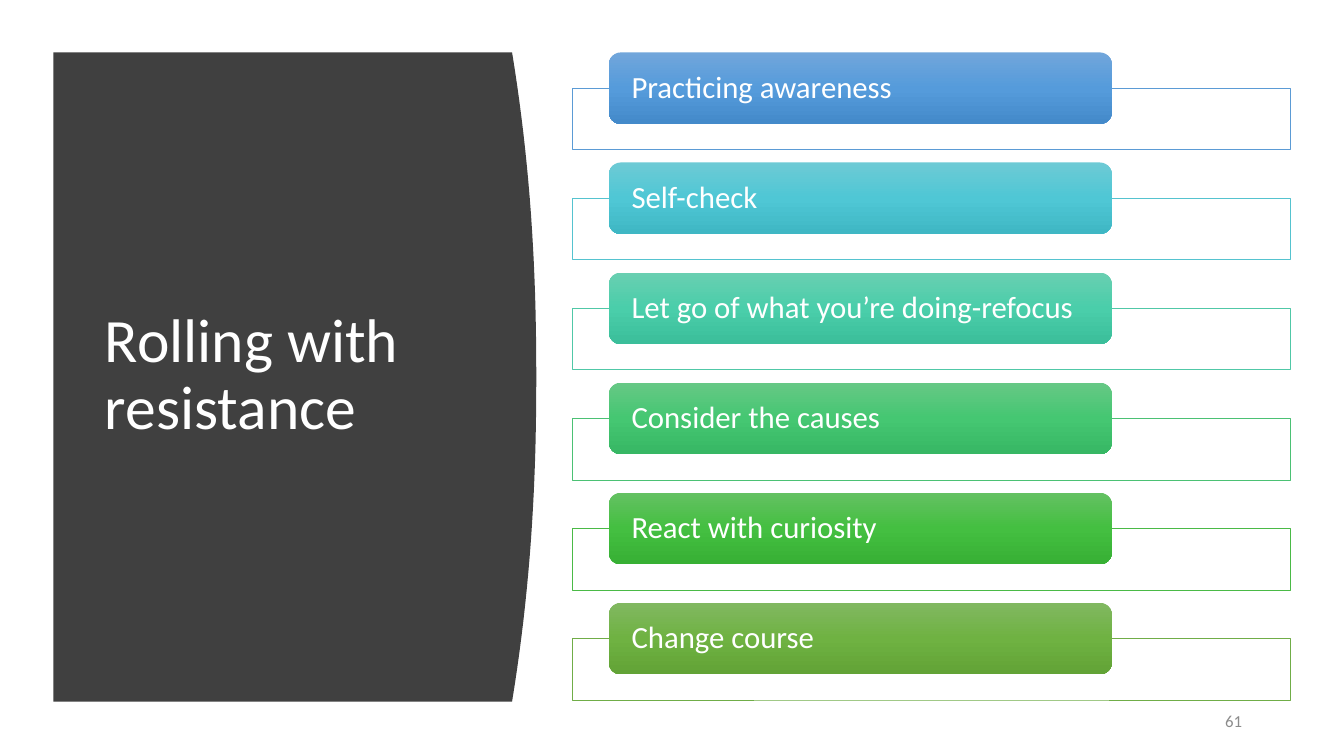
from copy import deepcopy

from pptx import Presentation
from pptx.dml.color import RGBColor
from pptx.enum.shapes import MSO_SHAPE
from pptx.enum.text import MSO_ANCHOR, PP_ALIGN
from pptx.oxml.ns import qn
from pptx.util import Inches, Pt

COLORS = {"panel": "404040", "white": "FFFFFF", "number": "8C8C8C"}
FONT = "Calibri"
# Label, outline of the frame, gradient of the bar from top to bottom
STEPS = [
    ("Practicing awareness", "5B9BD5", ("71A6DB", "559BDB", "448ACA")),
    ("Self-check", "55C3CF", ("6DCAD5", "4FC7D5", "3FB7C4")),
    ("Let go of what you’re doing-refocus", "50C8A7", ("69CFB1", "4ACEAA", "3BBE9A")),
    ("Consider the causes", "4BC174", ("66C885", "45C772", "37B764")),
    ("React with curiosity", "4ABA46", ("64C162", "44BF41", "37B034")),
    ("Change course", "70AD47", ("81B861", "6FB242", "62A336")),
]
STEP_PITCH = 1.092


def write_text(shape, text, size, color, alignment=PP_ALIGN.LEFT, line_spacing=None):
    frame = shape.text_frame
    frame.word_wrap = True
    frame.vertical_anchor = MSO_ANCHOR.MIDDLE
    frame.text = text
    paragraph = frame.paragraphs[0]
    paragraph.alignment = alignment
    paragraph.line_spacing = line_spacing
    paragraph.font.name = FONT
    paragraph.font.size = Pt(size)
    paragraph.font.color.rgb = RGBColor.from_string(COLORS[color])


presentation = Presentation()
presentation.slide_width = Inches(13.333)
presentation.slide_height = Inches(7.5)
slide = presentation.slides.add_slide(presentation.slide_layouts[5])
shapes = slide.shapes

# Dark panel whose right edge bulges outwards
left, top, bottom, edge, bulge = 0.53, 0.52, 6.96, 5.08, 0.24
curve_steps = 40
curve = []
for index in range(curve_steps + 1):
    offset = abs(2 * index / curve_steps - 1)
    x = edge + bulge * (1 - offset ** 2.2)
    y = top + (bottom - top) * index / curve_steps
    curve.append((Inches(x), Inches(y)))
builder = shapes.build_freeform(Inches(left), Inches(top), scale=1.0)
builder.add_line_segments(curve + [(Inches(left), Inches(bottom))], close=True)
panel = builder.convert_to_shape()
panel.shadow.inherit = False
panel.fill.solid()
panel.fill.fore_color.rgb = RGBColor.from_string(COLORS["panel"])
panel.line.fill.background()

title = shapes.title
title.left, title.top = Inches(0.94), Inches(1.11)
title.width, title.height = Inches(3.74), Inches(5.24)
write_text(title, "Rolling with resistance", 44, "white", line_spacing=0.9)
title._element.addprevious(panel._element)

for index, (label, outline, gradient) in enumerate(STEPS):
    bar_top = 0.52 + index * STEP_PITCH

    frame = shapes.add_shape(MSO_SHAPE.RECTANGLE, Inches(5.68), Inches(bar_top + 0.355),
                             Inches(7.12), Inches(0.61))
    frame.shadow.inherit = False
    frame.fill.solid()
    frame.fill.fore_color.rgb = RGBColor.from_string(COLORS["white"])
    frame.line.color.rgb = RGBColor.from_string(outline)
    frame.line.width = Pt(0.5)

    bar = shapes.add_shape(MSO_SHAPE.ROUNDED_RECTANGLE, Inches(6.04), Inches(bar_top),
                           Inches(4.99), Inches(0.71))
    bar.shadow.inherit = False
    bar.line.fill.background()
    bar.fill.gradient()
    bar.fill.gradient_angle = 270
    stop_list = bar._element.spPr.find(".//" + qn("a:gsLst"))
    stop_list.append(deepcopy(stop_list[0]))
    for stop, position, color in zip(bar.fill.gradient_stops, (0, 0.5, 1), gradient):
        stop.position = position
        stop.color.rgb = RGBColor.from_string(color)
    write_text(bar, label, 22, "white", line_spacing=0.9)
    bar.text_frame.margin_left = bar.text_frame.margin_right = Inches(0.19)
    bar.text_frame.margin_top = bar.text_frame.margin_bottom = 0

slide_number = shapes.add_textbox(Inches(9.42), Inches(6.95), Inches(3), Inches(0.4))
write_text(slide_number, "61", 12, "number", PP_ALIGN.RIGHT)

presentation.save("out.pptx")
